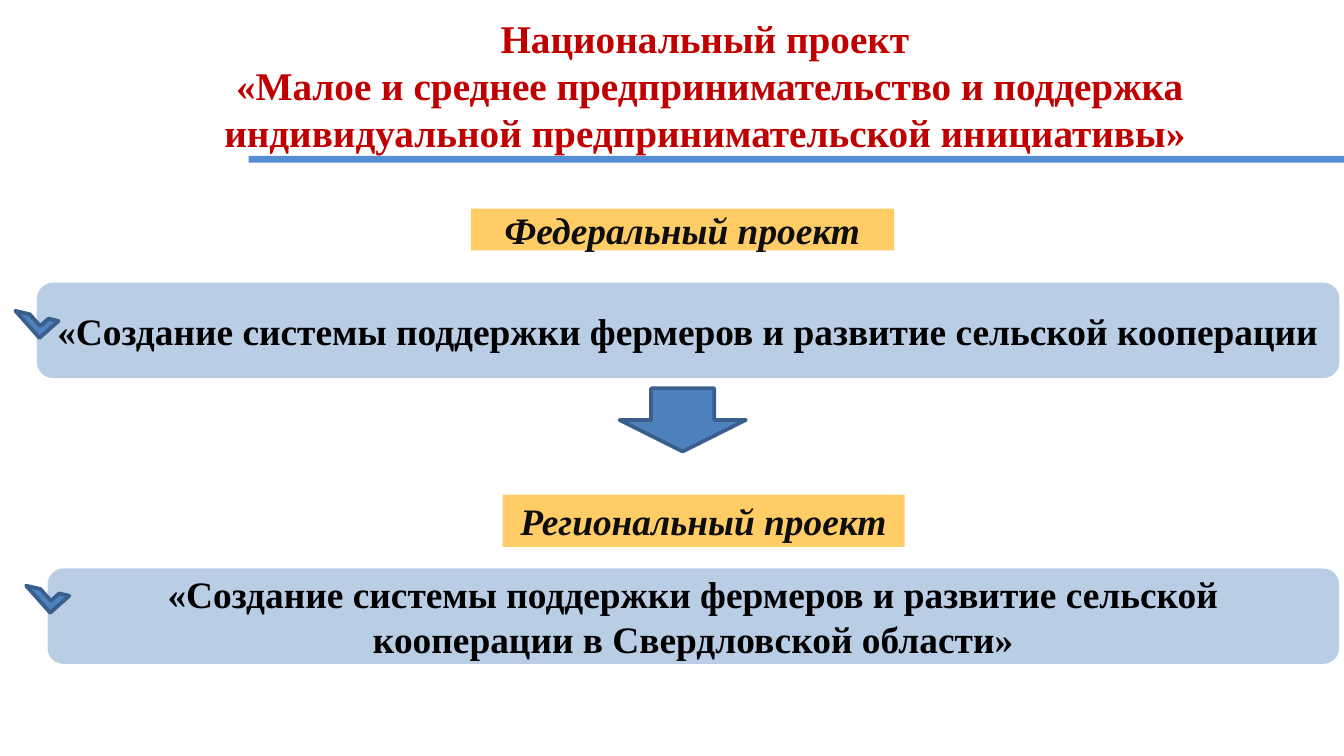
from dataclasses import dataclass

from pptx import Presentation
from pptx.dml.color import RGBColor
from pptx.enum.shapes import MSO_SHAPE
from pptx.enum.text import MSO_ANCHOR, PP_ALIGN
from pptx.util import Inches, Pt

WIDTH = 10
HEIGHT = WIDTH * 9 / 16
COLS = 100
ROWS = COLS * 9 / 16
FONT = "Times New Roman"
COLORS = {
    "title": "C00000",
    "panel": "B9CDE5",
    "label": "FFCC66",
    "rule": "558ED5",
    "accent": "4F81BD",
    "outline": "3A5F8C",
    "text": "000000",
    "label_text": "0D0D0D",
}


@dataclass(frozen=True)
class Box:
    col: float
    row: float
    cols: float
    rows: float

    def emu(self) -> tuple:
        x, y = WIDTH / COLS, HEIGHT / ROWS
        return (Inches(self.col * x), Inches(self.row * y),
                Inches(self.cols * x), Inches(self.rows * y))


@dataclass(frozen=True)
class Project:
    label: str
    label_box: Box
    name: str
    panel_box: Box
    check_box: Box


TITLE = ("Национальный проект\v «Малое и среднее предпринимательство и поддержка "
         "индивидуальной предпринимательской инициативы»")
PROJECTS = [
    Project("Федеральный проект", Box(35.03, 15.53, 31.5, 3.1),
            "«Создание системы поддержки фермеров и развитие сельской кооперации",
            Box(2.75, 21.03, 96.9, 7.1), Box(1.4, 22.55, 2.7, 1.9)),
    Project("Региональный проект ", Box(37.4, 36.8, 29.9, 3.9),
            "«Создание системы поддержки фермеров и развитие сельской кооперации "
            "в Свердловской области»",
            Box(3.54, 42.3, 96.1, 7.1), Box(2.2, 43, 2.7, 1.9)),
]


def rgb(name: str) -> RGBColor:
    return RGBColor.from_string(COLORS[name])


def write(sp, text: str, size: float, color: str, anchor=MSO_ANCHOR.MIDDLE,
          italic: bool = False) -> None:
    tf = sp.text_frame
    tf.word_wrap = True
    tf.vertical_anchor = anchor
    p = tf.paragraphs[0]
    p.text = text
    p.alignment = PP_ALIGN.CENTER
    p.font.name = FONT
    p.font.size = Pt(size)
    p.font.bold = True
    p.font.italic = italic
    p.font.color.rgb = rgb(color)


def add_shape(s, kind: MSO_SHAPE, box: Box, fill: str, outlined: bool = False):
    sp = s.shapes.add_shape(kind, *box.emu())
    sp.shadow.inherit = False
    sp.fill.solid()
    sp.fill.fore_color.rgb = rgb(fill)
    if outlined:
        sp.line.color.rgb = rgb("outline")
        sp.line.width = Pt(2)
    else:
        sp.line.fill.background()
    return sp


def add_project(s, project: Project) -> None:
    panel = add_shape(s, MSO_SHAPE.ROUNDED_RECTANGLE, project.panel_box, "panel")
    write(panel, project.name, 20, "text")
    label = add_shape(s, MSO_SHAPE.RECTANGLE, project.label_box, "label")
    write(label, project.label, 20, "label_text", italic=True)
    check = add_shape(s, MSO_SHAPE.HALF_FRAME, project.check_box, "accent", True)
    check.rotation = 228.4


def main() -> None:
    prs = Presentation()
    prs.slide_width, prs.slide_height = Inches(WIDTH), Inches(HEIGHT)
    s = prs.slides.add_slide(prs.slide_layouts[6])
    title = s.shapes.add_textbox(*Box(5.9, 0.6, 93.1, 11).emu())
    write(title, TITLE, 21, "title", MSO_ANCHOR.TOP)
    for project in PROJECTS:
        add_project(s, project)
    add_shape(s, MSO_SHAPE.RECTANGLE, Box(18.5, 11.6, 81.5, 0.5), "rule")
    add_shape(s, MSO_SHAPE.DOWN_ARROW, Box(46.1, 28.9, 9.4, 4.7), "accent", True)
    prs.save("out.pptx")


if __name__ == "__main__":
    main()
